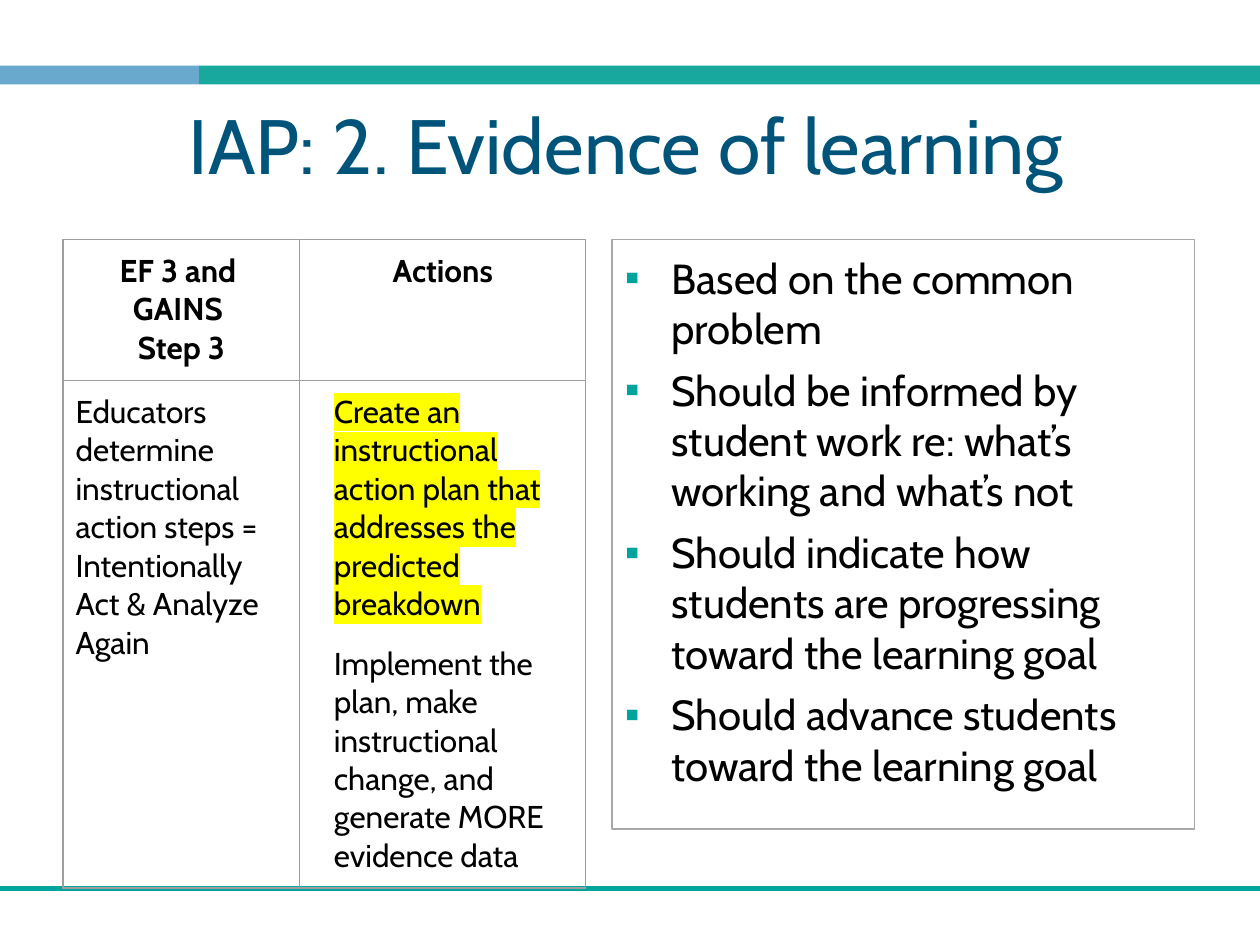
from lxml import etree
from pptx import Presentation
from pptx.dml.color import RGBColor
from pptx.enum.shapes import MSO_CONNECTOR, MSO_SHAPE
from pptx.enum.text import MSO_ANCHOR, MSO_AUTO_SIZE, PP_ALIGN
from pptx.oxml.ns import qn
from pptx.util import Inches, Pt

RECTANGLE = MSO_SHAPE.RECTANGLE
STRAIGHT = MSO_CONNECTOR.STRAIGHT
TOP, MIDDLE = MSO_ANCHOR.TOP, MSO_ANCHOR.MIDDLE
LEFT, CENTER = PP_ALIGN.LEFT, PP_ALIGN.CENTER
NO_AUTOFIT = MSO_AUTO_SIZE.NONE

FONT = "Cabin"
COLORS = {
    "blue": "69A9CD", "green": "19A89E", "teal": "00A49D", "title": "005479",
    "text": "000000", "frame": "A7A8AA", "grid": "9E9E9E", "highlight": "FFFF00",
}
MARGIN = Inches(0.1)

CRITERIA = [
    "Based on the common problem",
    "Should be informed by student work re: what’s working and what’s not",
    "Should indicate how students are progressing toward the learning goal",
    "Should advance students toward the learning goal",
]
STEP_HEADING = ["EF 3 and ", "GAINS ", "Step 3"]
ACTIONS_HEADING = ["Actions"]
STEP = ["Educators determine instructional action steps = "
        "Intentionally Act & Analyze Again"]
ACTIONS = [
    "Create an instructional action plan that addresses the predicted breakdown",
    "Implement the plan, make instructional change, and generate MORE evidence data",
]


def rgb(name):
    return RGBColor.from_string(COLORS[name])


def add_color(parent, name):
    etree.SubElement(parent, qn("a:srgbClr"), val=COLORS[name])


def set_margins(target):
    target.margin_left = target.margin_right = MARGIN
    target.margin_top = target.margin_bottom = MARGIN


def style(paragraph, size, color="text", bold=False, align=LEFT):
    paragraph.alignment = align
    font = paragraph.font
    font.name, font.size, font.bold = FONT, Pt(size), bold
    font.color.rgb = rgb(color)


def fill_paragraphs(frame, texts):
    frame.text = "\n".join(texts)
    return frame.paragraphs


def place(shape, box):
    shape.left, shape.top, shape.width, shape.height = map(Inches, box)


def prepare_frame(shape, anchor):
    frame = shape.text_frame
    frame.word_wrap = True
    frame.auto_size = NO_AUTOFIT
    frame.vertical_anchor = anchor
    set_margins(frame)
    return frame


def add_bands(slide, box, split):
    left, top, width, height = box
    for x, band_width, color in ((left, split, "blue"),
                                 (left + split, width - split, "green")):
        band = slide.shapes.add_shape(RECTANGLE, Inches(x), Inches(top),
                                      Inches(band_width), Inches(height))
        band.shadow.inherit = False
        band.fill.solid()
        band.fill.fore_color.rgb = rgb(color)
        band.line.fill.background()


def add_footer_rule(slide, left, top, width):
    rule = slide.shapes.add_connector(STRAIGHT, Inches(left), Inches(top),
                                      Inches(left + width), Inches(top))
    rule.line.color.rgb = rgb("teal")
    rule.line.width = Pt(3)
    etree.SubElement(rule._element.spPr, qn("a:effectLst"))


def set_title(slide, box):
    title = slide.shapes.title
    place(title, box)
    frame = prepare_frame(title, MIDDLE)
    frame.text = "IAP: 2. Evidence of learning"
    style(frame.paragraphs[0], 44, "title", align=CENTER)


def add_bullet(paragraph):
    properties = paragraph._p.get_or_add_pPr()
    properties.set("marL", str(Inches(0.37)))
    properties.set("indent", str(Inches(-0.38)))
    add_color(etree.SubElement(properties, qn("a:buClr")), "teal")
    etree.SubElement(properties, qn("a:buChar"), char="▪")


def set_criteria(slide, box):
    criteria = slide.placeholders[1]
    place(criteria, box)
    criteria.line.color.rgb = rgb("frame")
    criteria.line.width = Pt(1)
    frame = prepare_frame(criteria, TOP)
    for index, paragraph in enumerate(fill_paragraphs(frame, CRITERIA)):
        add_bullet(paragraph)
        paragraph.space_before = Pt(6.4 if index else 0)
        style(paragraph, 24)


def add_borders(cell):
    properties = cell._tc.get_or_add_tcPr()
    for side in ("a:lnL", "a:lnR", "a:lnT", "a:lnB"):
        border = etree.SubElement(properties, qn(side), w=str(Pt(0.75)))
        add_color(etree.SubElement(border, qn("a:solidFill")), "grid")


def fill_cell(cell, texts, heading, indent=0):
    set_margins(cell)
    add_borders(cell)
    cell.fill.background()
    for paragraph in fill_paragraphs(cell.text_frame, texts):
        if indent:
            properties = paragraph._p.get_or_add_pPr()
            properties.set("marL", str(Inches(indent)))
            properties.set("indent", "0")
        paragraph.space_after = Pt(0 if heading else 12)
        style(paragraph, 18, bold=heading, align=CENTER if heading else LEFT)


def highlight(run):
    marker = etree.SubElement(run._r.get_or_add_rPr(), qn("a:highlight"))
    add_color(marker, "highlight")


def add_steps_table(slide, box, step_width, heading_height):
    left, top, width, height = box
    table = slide.shapes.add_table(2, 2, *map(Inches, box)).table
    table.first_row = table.horz_banding = False
    table.columns[0].width = Inches(step_width)
    table.columns[1].width = Inches(width - step_width)
    table.rows[0].height = Inches(heading_height)
    table.rows[1].height = Inches(height - heading_height)
    fill_cell(table.cell(0, 0), STEP_HEADING, True)
    fill_cell(table.cell(0, 1), ACTIONS_HEADING, True)
    fill_cell(table.cell(1, 0), STEP, False)
    fill_cell(table.cell(1, 1), ACTIONS, False, indent=0.17)
    highlight(table.cell(1, 1).text_frame.paragraphs[0].runs[0])


def main():
    presentation = Presentation()
    presentation.slide_width = Inches(10)
    presentation.slide_height = Inches(7.5)
    slide = presentation.slides.add_slide(presentation.slide_layouts[1])
    add_bands(slide, (0, 0.52, 10, 0.15), split=1.58)
    add_footer_rule(slide, 0, 7.05, 10)
    set_title(slide, (0.47, 0.54, 9, 1.2))
    set_criteria(slide, (4.86, 1.9, 4.62, 4.68))
    add_steps_table(slide, (0.5, 1.9, 4.15, 5.07), 1.88, 1.12)
    presentation.save("out.pptx")


if __name__ == "__main__":
    main()
